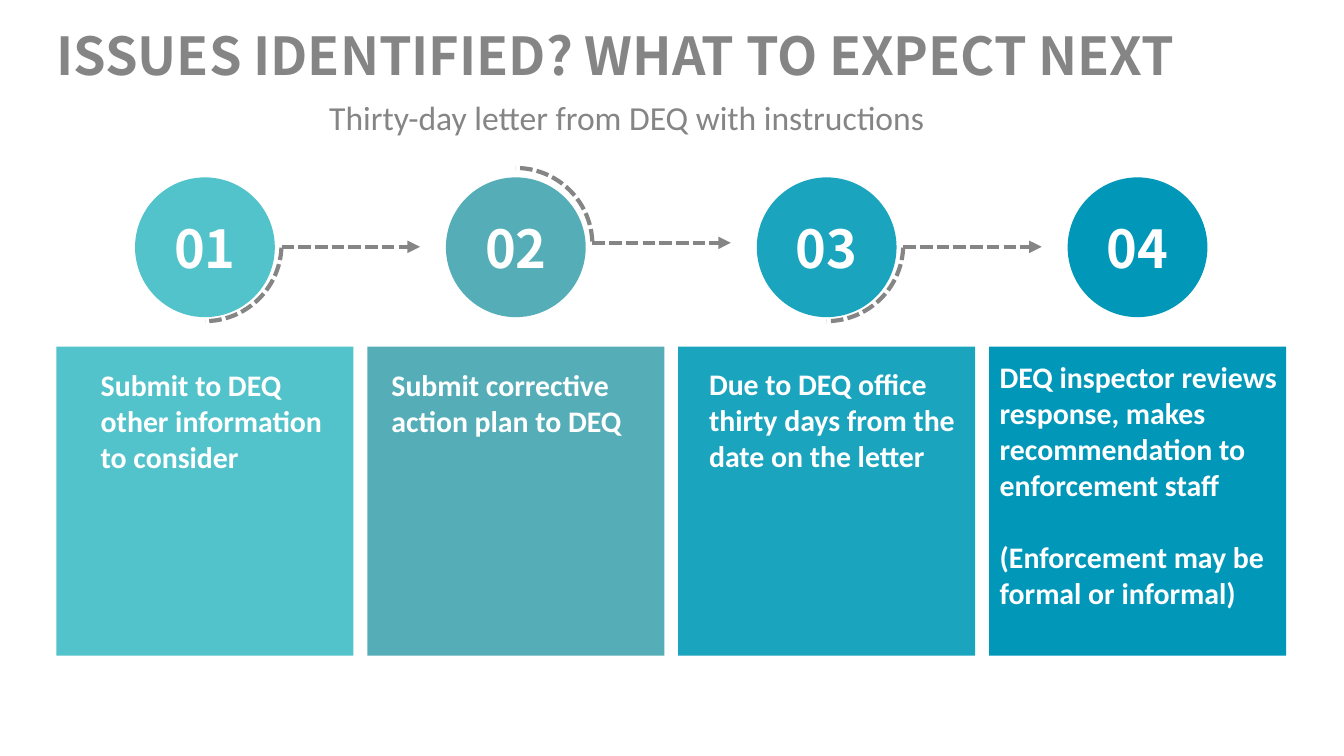
from lxml.etree import SubElement
from pptx import Presentation
from pptx.dml.color import RGBColor
from pptx.enum.dml import MSO_LINE
from pptx.enum.shapes import MSO_CONNECTOR, MSO_SHAPE
from pptx.enum.text import MSO_ANCHOR, PP_ALIGN
from pptx.oxml.ns import qn
from pptx.util import Inches, Pt

COLORS = {
    "gray": "858585", "white": "FFFFFF",
    "step1": "53C3CB", "step2": "55AEB7", "step3": "1AA4BE", "step4": "0197B8",
}
HEADING = {"name": "Noto Sans CJK SC", "size": Pt(28), "bold": True}
BODY = {"name": "Calibri", "size": Pt(16), "bold": True}
SUBTITLE = {"name": "Calibri", "size": Pt(18), "bold": False}
DASHED = {"width": Pt(2.25), "dash_style": MSO_LINE.SQUARE_DOT}
NO_MARGINS = {f"margin_{side}": 0 for side in ("left", "top", "right", "bottom")}

# The grid has 100 square columns across the slide
SLIDE_WIDTH = Inches(10)
SLIDE_HEIGHT = SLIDE_WIDTH * 9 // 16
CELL = SLIDE_WIDTH // 100
COLUMN_WIDTH, COLUMN_GAP = 22.1, 1.03
CIRCLE, ARC = 10.4, 11.4

# Paragraphs, then the text's left and top inset and width in its card
STEPS = [
    (["Submit to DEQ other information to consider"], 3.3, 1.5, 18.4),
    (["Submit corrective action plan to DEQ"], 1.8, 1.5, 18.4),
    (["Due to DEQ office thirty days from the date on the letter"], 2.3, 1.4, 18.4),
    (["DEQ inspector reviews response, makes recommendation to enforcement staff",
      "(Enforcement may be formal or informal)"], 0.8, 0.9, 21.3),
]


def grid(*cells):
    return [round(cell * CELL) for cell in cells]


def color(key):
    return RGBColor.from_string(COLORS[key])


def apply(target, values):
    for attribute, value in values.items():
        setattr(target, attribute, value)


def write(frame, paragraphs, font, ink, align=PP_ALIGN.LEFT):
    frame.word_wrap = True
    for index, words in enumerate(paragraphs):
        paragraph = frame.paragraphs[0] if index == 0 else frame.add_paragraph()
        paragraph.alignment = align
        if index:
            paragraph.space_before = Pt(19.5)
        run = paragraph.add_run()
        run.text = words
        apply(run.font, font)
        run.font.color.rgb = color(ink)


def add_text(slide, box, paragraphs, font, ink):
    frame = slide.shapes.add_textbox(*grid(*box)).text_frame
    apply(frame, NO_MARGINS)
    write(frame, paragraphs, font, ink)


def add_filled(slide, kind, box, fill):
    shape = slide.shapes.add_shape(kind, *grid(*box))
    shape.shadow.inherit = False
    shape.fill.solid()
    shape.fill.fore_color.rgb = color(fill)
    shape.line.fill.background()
    return shape


def add_header(slide, left, top, width):
    add_text(slide, (left, top, width, 5.6),
             ["ISSUES IDENTIFIED? WHAT TO EXPECT NEXT"], HEADING, "gray")
    add_text(slide, (left + 20.3, top + 5.5, 63.4, 3),
             ["Thirty-day letter from DEQ with instructions"], SUBTITLE, "gray")


def add_step(slide, number, left, top, width, height):
    paragraphs, inset_left, inset_top, text_width = STEPS[number - 1]
    fill = f"step{number}"
    # Card and its text
    card_top = top + 12.6
    card_height = height - 12.6
    add_filled(slide, MSO_SHAPE.RECTANGLE, (left, card_top, width, card_height), fill)
    add_text(slide, (left + inset_left, card_top + inset_top, text_width,
                     card_height - 2 * inset_top), paragraphs, BODY, "white")
    # Numbered circle
    circle_left = left + (width - CIRCLE) / 2
    circle = add_filled(slide, MSO_SHAPE.OVAL, (circle_left, top, CIRCLE, CIRCLE), fill)
    circle.text_frame.vertical_anchor = MSO_ANCHOR.MIDDLE
    write(circle.text_frame, [f"{number:02}"], HEADING, "white", PP_ALIGN.CENTER)


def add_link(slide, left, top, flipped):
    link = slide.shapes.add_group_shape().shapes
    # Dashed quarter arc, below the circle or flipped above it
    arc = link.add_shape(MSO_SHAPE.ARC, *grid(left, top, ARC, ARC))
    arc.shadow.inherit = False
    arc.fill.background()
    arc.adjustments[0], arc.adjustments[1] = 1.4, 53.93
    if flipped:
        arc._element.spPr.find(qn("a:xfrm")).set("flipV", "1")
    # Dashed arrow to the next step
    arrow_top = top + ARC / 2 + (-0.13 if flipped else 0.17)
    arrow = link.add_connector(MSO_CONNECTOR.STRAIGHT, *grid(
        left + ARC, arrow_top, left + ARC + 10.3, arrow_top))
    for part in (arc, arrow):
        apply(part.line, DASHED)
        part.line.color.rgb = color("gray")
    properties = arrow._element.spPr
    SubElement(properties.find(qn("a:ln")), qn("a:tailEnd")).set("type", "triangle")
    SubElement(properties, qn("a:effectLst"))


def add_process(slide, left, top, height):
    lefts = [left + index * (COLUMN_WIDTH + COLUMN_GAP) for index in range(len(STEPS))]
    for number, step_left in enumerate(lefts, 1):
        add_step(slide, number, step_left, top, COLUMN_WIDTH, height)
    for index, step_left in enumerate(lefts[:-1]):
        add_link(slide, step_left + (COLUMN_WIDTH - ARC) / 2, top - 0.7, index % 2 == 1)


def main():
    presentation = Presentation()
    apply(presentation, {"slide_width": SLIDE_WIDTH, "slide_height": SLIDE_HEIGHT})
    slide = presentation.slides.add_slide(presentation.slide_layouts[6])
    add_header(slide, 4.2, 1.7, 91.5)
    add_process(slide, 4.2, 13.2, 35.6)
    presentation.save("out.pptx")


if __name__ == "__main__":
    main()
